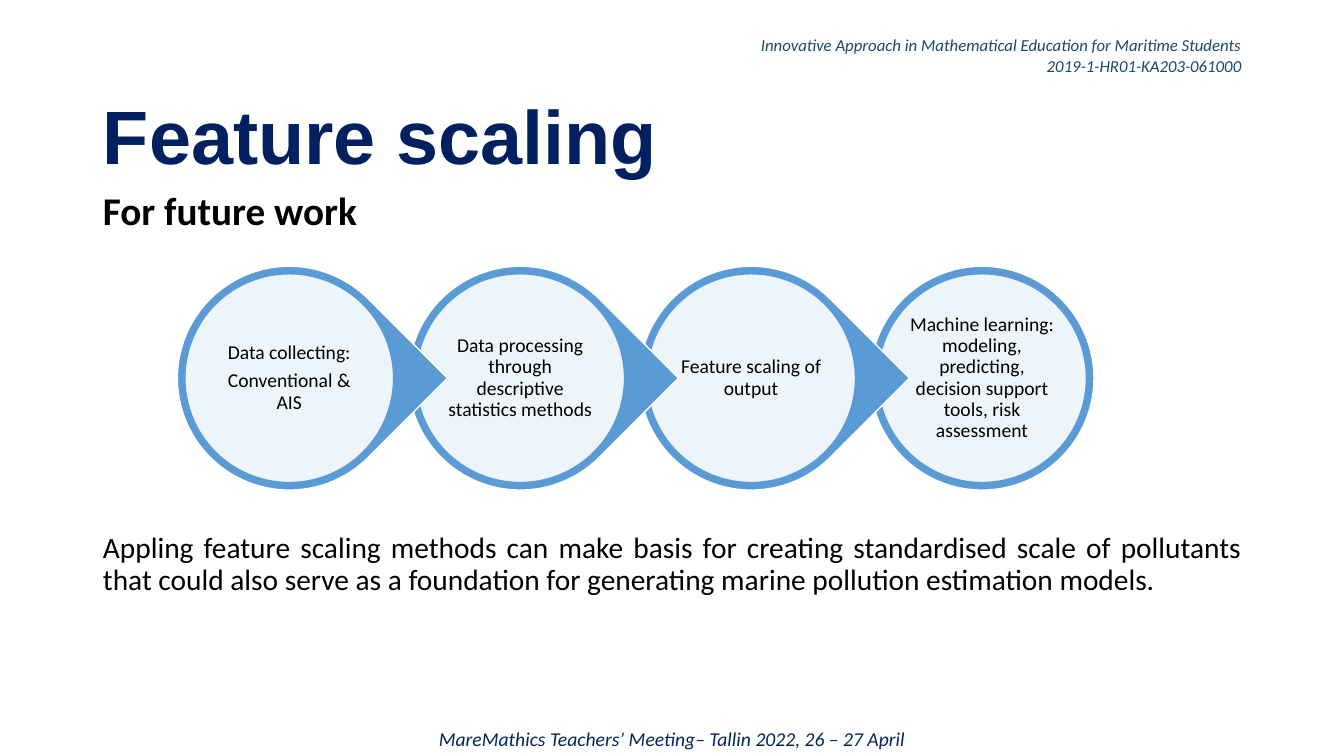
from lxml import etree
from pptx import Presentation
from pptx import util as u
from pptx.dml.color import RGBColor
from pptx.enum import shapes, text
from pptx.oxml.ns import qn

STEPS = [
    ["Data collecting:", "Conventional & AIS"],
    ["Data processing through descriptive statistics methods"],
    ["Feature scaling of output"],
    ["Machine learning: modeling, predicting, decision support tools, risk assessment"],
]


def color(value):
    return RGBColor.from_string(value)


class SlideBuilder:
    blue, navy, black, white = "5B9BD5", "002060", "000000", "FFFFFF"
    font = "Calibri"
    left, width = 2.34, 29.2

    def __init__(self, presentation):
        self.slide = presentation.slides.add_slide(presentation.slide_layouts[1])

    def place(self, shape, left, top, width, height):
        shape.left, shape.top = u.Cm(left), u.Cm(top)
        shape.width, shape.height = u.Cm(width), u.Cm(height)

    def frame(self, shape, anchor, inset=None):
        frame = shape.text_frame
        frame.word_wrap = True
        frame.auto_size = text.MSO_AUTO_SIZE.NONE
        frame.vertical_anchor = anchor
        if inset is not None:
            frame.margin_left = frame.margin_right = u.Cm(inset)
            frame.margin_top = frame.margin_bottom = u.Cm(inset)
        return frame

    def fill_paragraph(self, paragraph, words, size, fill, align=text.PP_ALIGN.LEFT, spacing=1.0,
                       before=0, after=0, bold=False, italic=False, name=None):
        paragraph.text = words
        paragraph.alignment = align
        paragraph.line_spacing = spacing
        paragraph.space_before, paragraph.space_after = u.Pt(before), u.Pt(after)
        properties = paragraph._p.get_or_add_pPr()
        properties.set("marL", "0")
        properties.set("indent", "0")
        etree.SubElement(properties, qn("a:buNone"))
        font = paragraph.font
        font.name, font.size = name or self.font, u.Pt(size)
        font.bold, font.italic = bold, italic
        font.color.rgb = color(fill)

    def title(self, words):
        shape = self.slide.shapes.title
        self.place(shape, self.left, 2.34, self.width, 2.36)
        frame = self.frame(shape, text.MSO_ANCHOR.MIDDLE)
        self.fill_paragraph(frame.paragraphs[0], words, 54, self.navy, spacing=0.9, bold=True,
                            name="Arial")

    def body(self, heading, conclusion, gap):
        shape = self.slide.placeholders[1]
        self.place(shape, self.left, 4.7, self.width, 10.95)
        frame = self.frame(shape, text.MSO_ANCHOR.TOP)
        self.fill_paragraph(frame.paragraphs[0], heading, 28, self.black, spacing=0.9, bold=True)
        self.fill_paragraph(frame.add_paragraph(), conclusion, 21, self.black,
                            text.PP_ALIGN.JUSTIFY, spacing=0.9, before=gap)

    def text_box(self, lines, left, top, width, height, size, fill, align,
                 anchor=text.MSO_ANCHOR.MIDDLE, inset=None, **style):
        box = self.slide.shapes.add_textbox(u.Cm(left), u.Cm(top), u.Cm(width), u.Cm(height))
        frame = self.frame(box, anchor, inset)
        for index, words in enumerate(lines):
            paragraph = frame.add_paragraph() if index else frame.paragraphs[0]
            self.fill_paragraph(paragraph, words, size, fill, align, **style)

    def disc(self, kind, left, top, size, fill, line, opacity=100):
        shape = self.slide.shapes.add_shape(kind, u.Cm(left), u.Cm(top), u.Cm(size), u.Cm(size))
        shape.shadow.inherit = False
        shape.fill.solid()
        shape.fill.fore_color.rgb = color(fill)
        shape.line.color.rgb = color(line)
        shape.line.width = u.Pt(1)
        if opacity < 100:
            solid = shape._element.spPr.find(qn("a:solidFill"))
            etree.SubElement(solid[0], qn("a:alpha"), val=str(opacity * 1000))
        return shape

    def step(self, lines, left, top, pointed):
        outer, inner, label = 5.64, 5.26, 3.76
        rim, pad = (outer - inner) / 2, (outer - label) / 2
        kind = shapes.MSO_SHAPE.TEAR if pointed else shapes.MSO_SHAPE.OVAL
        drop = self.disc(kind, left, top, outer, self.blue, self.white)
        if pointed:
            drop.adjustments[0] = 1.0
            drop.rotation = 45
        self.disc(shapes.MSO_SHAPE.OVAL, left + rim, top + rim, inner, self.white, self.blue, 90)
        self.text_box(lines, left + pad, top + pad, label, label, 14, self.black,
                      text.PP_ALIGN.CENTER, inset=0.05, spacing=0.9, after=4.9)


def main():
    presentation = Presentation()
    presentation.slide_width, presentation.slide_height = u.Cm(33.87), u.Cm(19.05)
    builder = SlideBuilder(presentation)
    builder.text_box(
        ["Innovative Approach in Mathematical Education for Maritime Students",
         "2019-1-HR01-KA203-061000"],
        builder.left, 0.76, builder.width, 1.27, 12, "1C476E", text.PP_ALIGN.RIGHT, italic=True)
    builder.text_box(
        ["MareMathics Teachers’ Meeting– Tallin 2022, 26 – 27 April"],
        builder.left, 18.19, builder.width, 0.86, 14, "032659", text.PP_ALIGN.CENTER,
        anchor=text.MSO_ANCHOR.TOP, italic=True)
    builder.body(
        "For future work",
        "Appling feature scaling methods can make basis for creating standardised scale of "
        "pollutants that could also serve as a foundation for generating marine pollution "
        "estimation models.", gap=214)
    builder.title("Feature scaling")
    last = len(STEPS) - 1
    for index in range(last, -1, -1):
        builder.step(STEPS[index], 4.47 + 5.82 * index, 6.71, pointed=index < last)
    presentation.save("out.pptx")


if __name__ == "__main__":
    main()
